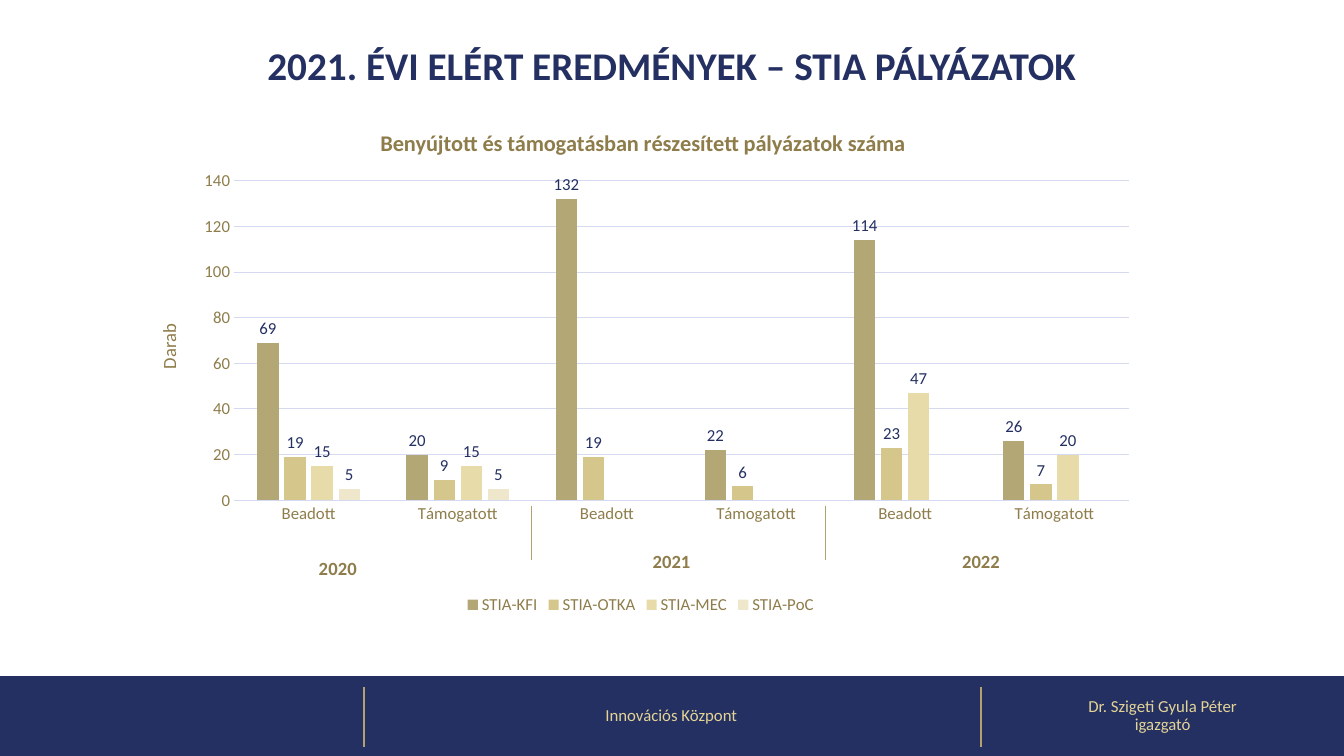
from lxml import etree
from pptx import Presentation
from pptx.chart.data import CategoryChartData
from pptx.dml.color import RGBColor
from pptx.enum.chart import XL_CHART_TYPE, XL_LABEL_POSITION, XL_LEGEND_POSITION, XL_TICK_MARK
from pptx.enum.shapes import MSO_CONNECTOR, MSO_SHAPE
from pptx.enum.text import MSO_ANCHOR, PP_ALIGN
from pptx.oxml.ns import qn
from pptx.util import Pt

COLUMNS = XL_CHART_TYPE.COLUMN_CLUSTERED
OUTSIDE = XL_LABEL_POSITION.OUTSIDE_END
BOTTOM = XL_LEGEND_POSITION.BOTTOM
NO_TICK = XL_TICK_MARK.NONE
STRAIGHT = MSO_CONNECTOR.STRAIGHT
RECT = MSO_SHAPE.RECTANGLE
TOP, MIDDLE = MSO_ANCHOR.TOP, MSO_ANCHOR.MIDDLE
CENTER = PP_ALIGN.CENTER

NAVY = RGBColor(0x24, 0x2F, 0x62)
GOLD = RGBColor(0xB3, 0xA1, 0x6E)
PALE_GOLD = RGBColor(0xE3, 0xD4, 0x96)
BROWN = RGBColor(0x8E, 0x7D, 0x4B)
GRID = RGBColor(0xD6, 0xDA, 0xF0)

CATEGORIES = ["Beadott", "Támogatott"] * 3
SERIES = [
    ("STIA-KFI", (69, 20, 132, 22, 114, 26), RGBColor(0xB3, 0xA7, 0x76)),
    ("STIA-OTKA", (19, 9, 19, 6, 23, 7), RGBColor(0xD5, 0xC7, 0x8C)),
    ("STIA-MEC", (15, 15, None, None, 47, 20), RGBColor(0xE7, 0xDB, 0xAA)),
    ("STIA-PoC", (5, 5, None, None, None, None), RGBColor(0xEF, 0xE7, 0xCB)),
]


class SlideBuilder:
    def __init__(self, slide, font_name):
        self.slide = slide
        self.font_name = font_name

    def style(self, font, size, color, bold=False):
        font.name = self.font_name
        font.size = Pt(size)
        font.color.rgb = color
        font.bold = bold

    def rect(self, x, y, w, h, color):
        sp = self.slide.shapes.add_shape(RECT, Pt(x), Pt(y), Pt(w), Pt(h))
        sp.shadow.inherit = False
        sp.fill.solid()
        sp.fill.fore_color.rgb = color
        sp.line.fill.background()

    def line(self, x, top, bottom, width):
        cn = self.slide.shapes.add_connector(STRAIGHT, Pt(x), Pt(top), Pt(x), Pt(bottom))
        cn.line.color.rgb = GOLD
        cn.line.width = Pt(width)
        etree.SubElement(cn._element.spPr, qn("a:effectLst"))

    def text(self, x, y, w, h, lines, size, color, bold=False, anchor=TOP, spacing=1.0):
        tf = self.slide.shapes.add_textbox(Pt(x), Pt(y), Pt(w), Pt(h)).text_frame
        tf.word_wrap = True
        tf.vertical_anchor = anchor
        for i, line in enumerate(lines):
            p = tf.add_paragraph() if i else tf.paragraphs[0]
            p.text = line
            p.alignment = CENTER
            p.line_spacing = spacing
            self.style(p.font, size, color, bold)

    def place(self, element, index, **values):
        for old in element.findall(qn("c:layout")):
            element.remove(old)
        layout = etree.Element(qn("c:layout"))
        manual = etree.SubElement(layout, qn("c:manualLayout"))
        for name, value in values.items():
            etree.SubElement(manual, qn("c:" + name)).set("val", str(value))
        element.insert(index, layout)

    def chart_title(self, title, text, size, bold, x, y):
        p = title.text_frame.paragraphs[0]
        p.text = text
        self.style(p.font, size, BROWN, bold)
        self.place(title._element, 1, xMode="edge", yMode="edge", x=x, y=y)

    def axis(self, axis):
        axis.major_tick_mark = axis.minor_tick_mark = NO_TICK
        self.style(axis.tick_labels.font, 12, BROWN)

    def chart(self, x, y, w, h):
        data = CategoryChartData()
        data.categories = CATEGORIES
        for name, values, _ in SERIES:
            data.add_series(name, values)
        chart = self.slide.shapes.add_chart(COLUMNS, Pt(x), Pt(y), Pt(w), Pt(h), data).chart
        self.style(chart.font, 10, NAVY)
        chart.has_title = True
        self.chart_title(chart.chart_title, "Benyújtott és támogatásban részesített pályázatok száma",
                         16, True, 0.24, 0.04)

        cat, val = chart.category_axis, chart.value_axis
        self.axis(cat)
        cat.format.line.color.rgb = GRID
        cat.format.line.width = Pt(0.75)
        self.chart_title(cat.axis_title, "2020", 13.3, True, 0.18, 0.87)
        self.axis(val)
        val.minimum_scale, val.maximum_scale, val.major_unit = 0, 140, 20
        val.format.line.fill.background()
        val.major_gridlines.format.line.color.rgb = GRID
        val.major_gridlines.format.line.width = Pt(0.75)
        self.chart_title(val.axis_title, "Darab", 13.3, False, 0.02, 0.42)
        body = val.axis_title._element.find(".//" + qn("a:bodyPr"))
        body.set("rot", "-5400000")
        body.set("vert", "horz")

        plot = chart.plots[0]
        plot.gap_width, plot.overlap = 219, -27
        plot.vary_by_categories = False
        for series, (_, _, color) in zip(plot.series, SERIES):
            series.format.fill.solid()
            series.format.fill.fore_color.rgb = color
            labels = series.data_labels
            labels.show_value = True
            labels.position = OUTSIDE
            self.style(labels.font, 12, NAVY)
        self.place(chart._chartSpace.chart.plotArea, 0, layoutTarget="inner",
                   xMode="edge", yMode="edge", x=0.1, y=0.15, w=0.88, h=0.62)

        chart.has_legend = True
        chart.legend.position = BOTTOM
        chart.legend.include_in_layout = False
        self.style(chart.legend.font, 12, BROWN)


def main():
    prs = Presentation()
    prs.slide_width, prs.slide_height = Pt(960), Pt(540)
    s = SlideBuilder(prs.slides.add_slide(prs.slide_layouts[6]), "Calibri")

    s.rect(0, 483, 960, 57, NAVY)
    for x in (260, 701):
        s.line(x, 491, 533.5, 1.5)
    s.text(258.5, 483, 442, 57, ["Innovációs Központ"], 12, PALE_GOLD, anchor=MIDDLE, spacing=0.9)
    s.text(701, 483, 259, 57, ["Dr. Szigeti Gyula Péter", "igazgató"], 12, PALE_GOLD,
           anchor=MIDDLE, spacing=0.9)

    s.text(94.5, 26, 770.5, 41, ["2021. ÉVI ELÉRT EREDMÉNYEK – STIA PÁLYÁZATOK"], 28, NAVY, bold=True)
    s.chart(94.5, 74, 726.5, 368)
    for x, year in ((444, "2021"), (665, "2022")):
        s.text(x, 389, 71.5, 23, [year], 13.3, BROWN, bold=True)
    for x in (379.5, 589.5):
        s.line(x, 361.5, 400, 0.5)

    prs.save("out.pptx")


if __name__ == "__main__":
    main()
